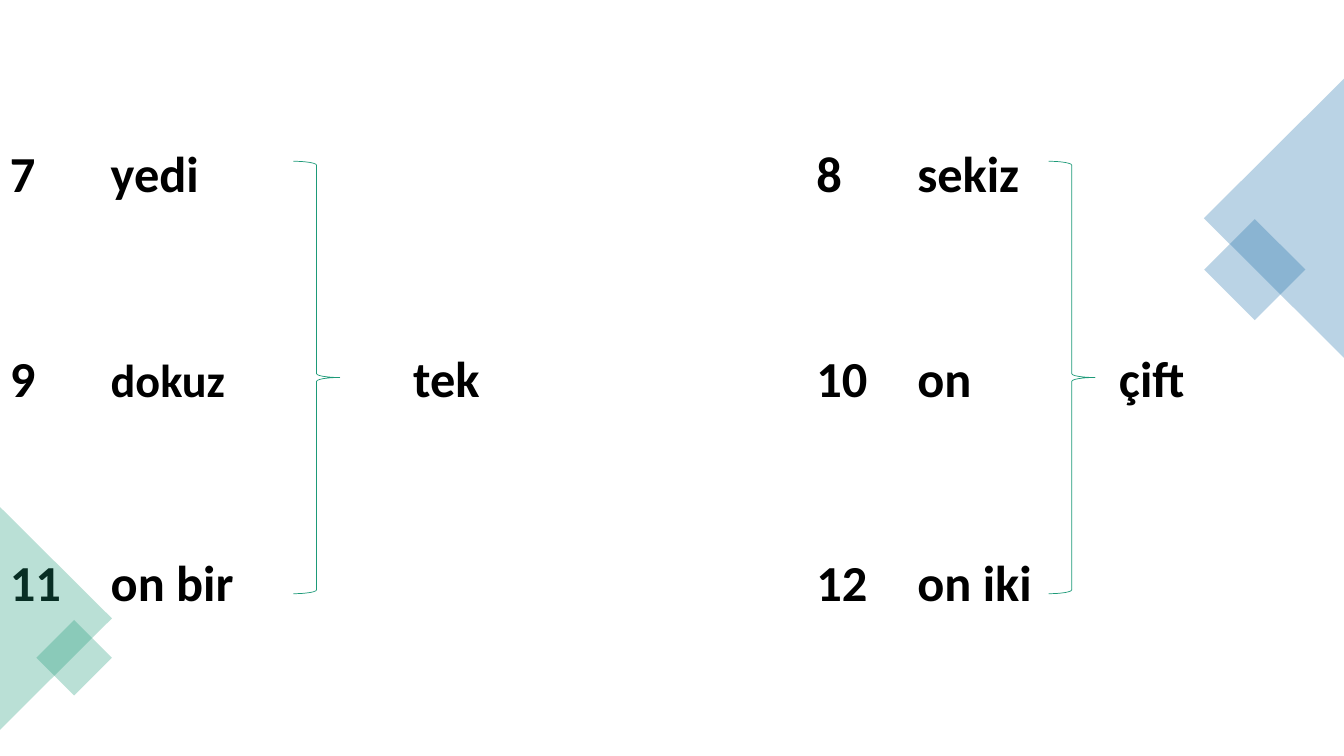
import pptx
import pptx.util
import pptx.dml.color
import pptx.enum.shapes
import pptx.oxml
import pptx.oxml.ns
from pptx.util import Inches, Pt

COLORS = {"text": "000000", "blue": "1D6FA9", "green": "1D9A78"}
SHAPE = pptx.enum.shapes.MSO_SHAPE


def rgb(name):
    return pptx.dml.color.RGBColor.from_string(COLORS[name])


prs = pptx.Presentation()
prs.slide_width, prs.slide_height = Inches(13.33), Inches(7.5)
s = prs.slides.add_slide(prs.slide_layouts[6])

# Number words, aligned in columns by tab stops
rows = [
    ["7\t", "yedi", "\t\t8\tsekiz"],
    ["9\t", "dokuz", "\ttek\t10\ton\tçift"],
    ["11\t", "on bir", "\t\t12\ton iki"],
]
tab_stops = [1, 4, 8, 9, 11]
tf = s.shapes.add_textbox(Inches(0), Inches(1.43), Inches(13.33), Inches(4.75)).text_frame
tf.word_wrap = True
for i, row in enumerate(rows):
    p = tf.paragraphs[0] if i == 0 else tf.add_paragraph()
    p.line_spacing = 0.9
    p.space_before = Pt(107.3 if i else 0)
    tabs = pptx.oxml.parse_xml(f"<a:tabLst {pptx.oxml.ns.nsdecls('a')}/>")
    for stop in tab_stops:
        tab = tabs.makeelement(pptx.oxml.ns.qn("a:tab"), {"pos": str(Inches(stop)), "algn": "l"})
        tabs.append(tab)
    p._p.get_or_add_pPr().append(tabs)
    p.font.name, p.font.size, p.font.bold = "Calibri", Pt(36), True
    p.font.color.rgb = rgb("text")
    for text in row:
        r = p.add_run()
        r.text = text
        if text == "dokuz":
            r.font.size = Pt(33)

# Translucent corner decorations
decorations = [
    (SHAPE.RECTANGLE, 12.09, 2.32, 0.71, 0.71, 45, "blue"),
    (SHAPE.ISOSCELES_TRIANGLE, 11.25, 1.47, 2.77, 1.39, 270, "blue"),
    (SHAPE.ISOSCELES_TRIANGLE, -0.55, 5.58, 2.21, 1.11, 90, "green"),
    (SHAPE.RECTANGLE, 0.47, 6.26, 0.53, 0.53, 45, "green"),
]
for kind, x, y, w, h, angle, color in decorations:
    sp = s.shapes.add_shape(kind, Inches(x), Inches(y), Inches(w), Inches(h))
    sp.rotation = angle
    sp.shadow.inherit = False
    sp.line.fill.background()
    sp.fill.solid()
    sp.fill.fore_color.rgb = rgb(color)
    clr = sp.fill._xPr.find(".//" + pptx.oxml.ns.qn("a:srgbClr"))
    clr.append(clr.makeelement(pptx.oxml.ns.qn("a:alpha"), {"val": "30000"}))

# Braces grouping odd and even numbers
for x in (2.91, 10.4):
    sp = s.shapes.add_shape(SHAPE.RIGHT_BRACE, Inches(x), Inches(1.6), Inches(0.46), Inches(4.29))
    sp.shadow.inherit = False
    sp.fill.background()
    sp.line.color.rgb = rgb("green")
    sp.line.width = Pt(0.5)

prs.save("out.pptx")
